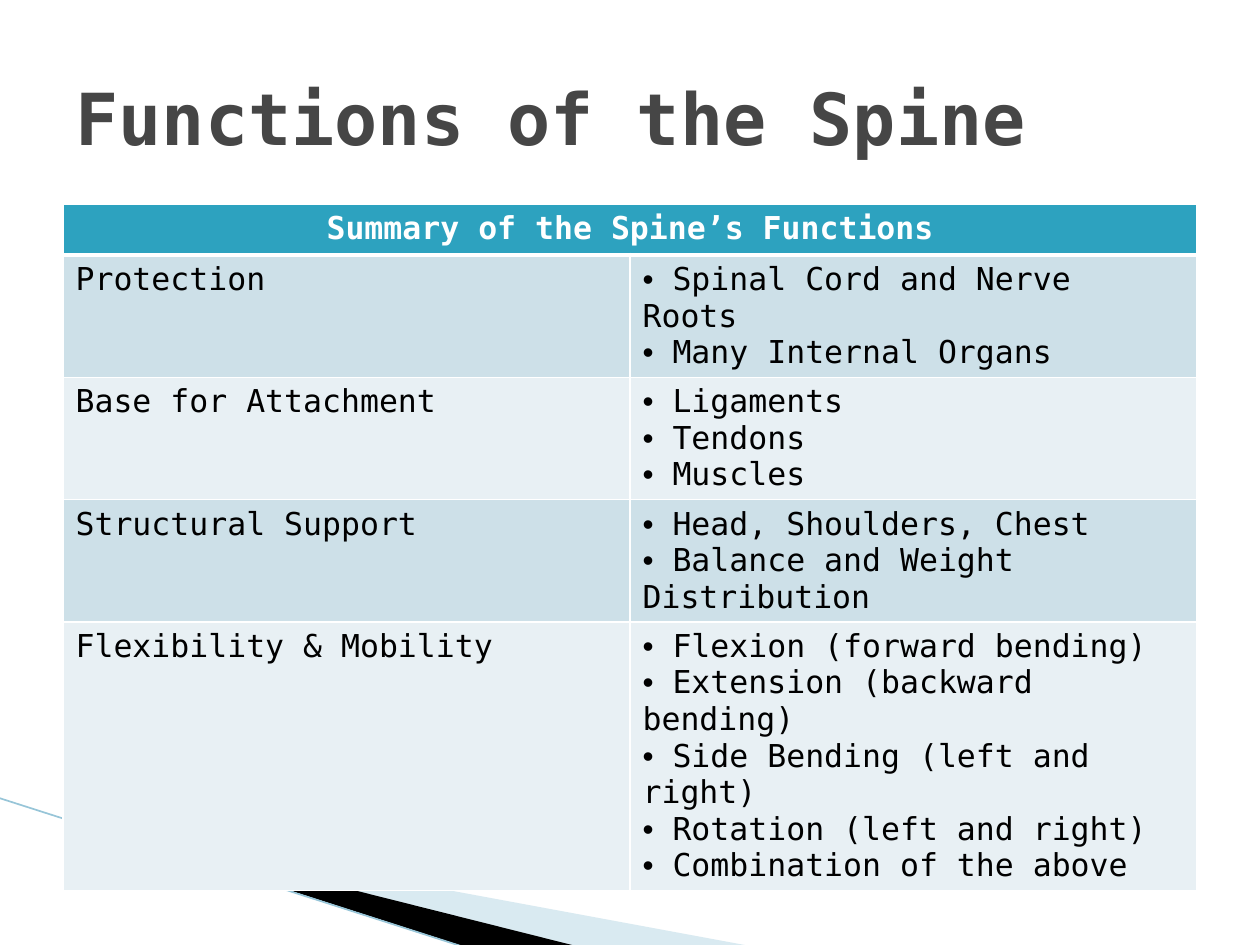
from lxml import etree
from pptx import Presentation
from pptx.dml.color import RGBColor
from pptx.enum.shapes import MSO_CONNECTOR
from pptx.enum.text import MSO_ANCHOR, PP_ALIGN
from pptx.oxml.ns import qn
from pptx.util import Pt

STRAIGHT = MSO_CONNECTOR.STRAIGHT
MIDDLE = MSO_ANCHOR.MIDDLE
LEFT, CENTER = PP_ALIGN.LEFT, PP_ALIGN.CENTER
PX = 914400 / 126
FONT = "DejaVu Sans Mono"


def px(value):
    return round(value * PX)


def rgb(value):
    return RGBColor.from_string(value)


prs = Presentation()
prs.slide_width, prs.slide_height = px(1260), px(945)
slide = prs.slides.add_slide(prs.slide_layouts[5])

bands = [
    ([(69, 820), (750, 946), (575, 946), (69, 819)], "A0CBDC", 40),
    ([(67, 818), (576, 946), (469, 948), (68, 819)], "000000", 100),
]
for points, color, opacity in bands:
    outline = slide.shapes.build_freeform(*points[0], scale=PX)
    outline.add_line_segments(points[1:])
    band = outline.convert_to_shape()
    band.shadow.inherit = False
    band.fill.solid()
    band.fill.fore_color.rgb = rgb(color)
    band.line.fill.background()
    if opacity < 100:
        tint = band.fill._xPr.find(qn("a:solidFill"))[0]
        etree.SubElement(tint, qn("a:alpha"), val=str(opacity * 1000))

edge = slide.shapes.add_connector(STRAIGHT, px(-1), px(798), px(467), px(948))
edge.line.color.rgb = rgb("97C5D8")
edge.line.width = Pt(0.95)
etree.SubElement(edge._element.spPr, qn("a:effectLst"))

title = slide.shapes.title
title.left, title.top, title.width, title.height = px(63), px(38), px(1134), px(158)
title.text_frame.vertical_anchor = MIDDLE
title.text_frame.word_wrap = True
heading = title.text_frame.paragraphs[0]
heading.alignment = LEFT
heading_run = heading.add_run()
heading_run.text = "Functions of the Spine"
heading_run.font.name = FONT
heading_run.font.size = Pt(41)
heading_run.font.bold = True
heading_run.font.color.rgb = rgb("464646")

functions = [
    (["Summary of the Spine’s Functions"], []),
    (["Protection"], ["Spinal Cord and Nerve Roots", "Many Internal Organs"]),
    (["Base for Attachment"], ["Ligaments", "Tendons", "Muscles"]),
    (["Structural Support"], ["Head, Shoulders, Chest", "Balance and Weight Distribution"]),
    (["Flexibility & Mobility"], [
        "Flexion (forward bending)",
        "Extension (backward bending)",
        "Side Bending (left and right)",
        "Rotation (left and right)",
        "Combination of the above",
    ]),
]
row_heights = [51, 122, 122, 122, 268]
summary = slide.shapes.add_table(
    len(functions), 2, px(63), px(204), px(1134), px(sum(row_heights))).table
summary.cell(0, 0).merge(summary.cell(0, 1))

for r, contents in enumerate(functions):
    summary.rows[r].height = px(row_heights[r])
    header = r == 0
    fill = "2DA2BF" if header else ("E8F0F4", "CDE0E8")[r % 2]
    for c, lines in enumerate(contents):
        cell = summary.cell(r, c)
        cell.fill.solid()
        cell.fill.fore_color.rgb = rgb(fill)
        tc_pr = cell._tc.get_or_add_tcPr()
        for position, side in enumerate(("lnL", "lnR", "lnT", "lnB")):
            thick = (r, side) in ((0, "lnB"), (1, "lnT"))
            border = etree.Element(qn(f"a:{side}"), w=str(Pt(3 if thick else 1)))
            stroke = etree.SubElement(border, qn("a:solidFill"))
            etree.SubElement(stroke, qn("a:srgbClr"), val="FFFFFF")
            tc_pr.insert(position, border)
        for i, line in enumerate(lines):
            frame = cell.text_frame
            paragraph = frame.add_paragraph() if i else frame.paragraphs[0]
            paragraph.alignment = CENTER if header else LEFT
            if c == 1:
                p_pr = paragraph._p.get_or_add_pPr()
                p_pr.set("marL", "0")
                p_pr.set("indent", "0")
                etree.SubElement(p_pr, qn("a:buFont"), typeface="Arial")
                etree.SubElement(p_pr, qn("a:buChar"), char="•")
            run = paragraph.add_run()
            run.text = f" {line}" if c == 1 else line
            run.font.name = FONT
            run.font.size = Pt(18)
            run.font.bold = header
            run.font.color.rgb = rgb("FFFFFF" if header else "000000")

prs.save("out.pptx")
